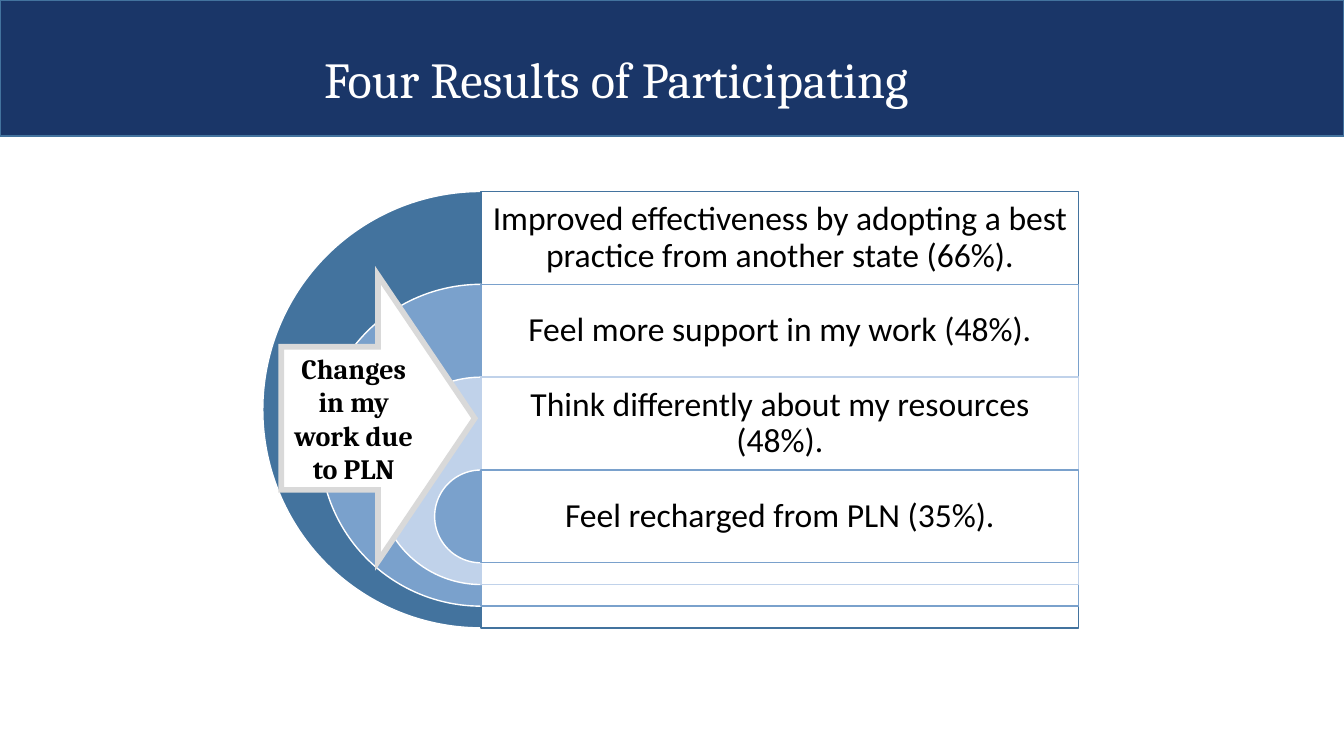
import dataclasses

import lxml.etree
import pptx
import pptx.dml.color
import pptx.enum.shapes
import pptx.enum.text
import pptx.oxml.ns
import pptx.shapes.autoshape
import pptx.slide
import pptx.util

Pt = pptx.util.Pt
Color = pptx.dml.color.RGBColor
Preset = pptx.enum.shapes.MSO_SHAPE


@dataclasses.dataclass(frozen=True)
class Theme:
    navy: str = "1A3668"
    steel: str = "43739E"
    sky: str = "7AA1CC"
    pale: str = "C0D2EA"
    grey: str = "D9D9D9"
    white: str = "FFFFFF"
    black: str = "000000"
    serif: str = "Cambria"
    sans: str = "Calibri"
    title_size: int = 36
    result_size: int = 24
    arrow_size: int = 20


THEME = Theme()


@dataclasses.dataclass(frozen=True)
class Frame:
    left: float
    top: float
    width: float
    height: float

    def lengths(self) -> list[pptx.util.Length]:
        return [Pt(value) for value in dataclasses.astuple(self)]


@dataclasses.dataclass(frozen=True)
class Result:
    text: str
    color: str


RESULTS = [
    Result("Improved effectiveness by adopting a best practice from another state (66%).", THEME.steel),
    Result("Feel more support in my work (48%).", THEME.sky),
    Result("Think differently about my resources (48%).", THEME.pale),
    Result("Feel recharged from PLN (35%).", THEME.sky),
]

AXIS_LEFT = 343.6
RESULTS_TOP = 136.8
RESULTS_WIDTH = 427
ROW_HEIGHT = 66.3
RING_GROWTH = 81.8
TITLE_FORMAT = {"name": THEME.serif, "size": Pt(THEME.title_size)}
RESULT_FORMAT = {"name": THEME.sans, "size": Pt(THEME.result_size)}
ARROW_FORMAT = {"name": THEME.serif, "size": Pt(THEME.arrow_size), "bold": True}


def add_preset(page: pptx.slide.Slide, preset: Preset, frame: Frame, fill: str,
               line: str, line_width: float = 1) -> pptx.shapes.autoshape.Shape:
    shape = page.shapes.add_shape(preset, *frame.lengths())
    shape.shadow.inherit = False
    shape.fill.solid()
    shape.fill.fore_color.rgb = Color.from_string(fill)
    shape.line.color.rgb = Color.from_string(line)
    shape.line.width = Pt(line_width)
    return shape


def write_text(shape: pptx.shapes.autoshape.Shape, text: str, color: str,
               font_format: dict, line_spacing: float = 1) -> None:
    box = shape.text_frame
    box.word_wrap = True
    box.vertical_anchor = pptx.enum.text.MSO_ANCHOR.MIDDLE
    para = box.paragraphs[0]
    para.alignment = pptx.enum.text.PP_ALIGN.CENTER
    para.line_spacing = line_spacing
    span = para.add_run()
    span.text = text
    span.font.color.rgb = Color.from_string(color)
    for name, value in font_format.items():
        setattr(span.font, name, value)


def set_fill_opacity(shape: pptx.shapes.autoshape.Shape, percent: int) -> None:
    color = shape.fill._xPr.find(".//" + pptx.oxml.ns.qn("a:srgbClr"))
    lxml.etree.SubElement(color, pptx.oxml.ns.qn("a:alpha"), val=str(percent * 1000))


def sharpen_corners(shape: pptx.shapes.autoshape.Shape) -> None:
    line = shape.line._get_or_add_ln()
    lxml.etree.SubElement(line, pptx.oxml.ns.qn("a:miter"), lim="800000")


def add_title(page: pptx.slide.Slide) -> None:
    add_preset(page, Preset.RECTANGLE, Frame(0, 0, 960, 97.2), THEME.navy, THEME.steel)
    title = page.shapes.add_textbox(*Frame(30.2, 6.5, 828, 104.4).lengths())
    write_text(title, "Four Results of Participating ", THEME.white, TITLE_FORMAT, 0.9)


def add_result(page: pptx.slide.Slide, index: int, result: Result) -> None:
    """Draw a half disc, its panel and its text; each later result is nested in the one before."""
    top = RESULTS_TOP + index * ROW_HEIGHT
    size = ROW_HEIGHT + (len(RESULTS) - 1 - index) * RING_GROWTH

    half_disc = add_preset(page, Preset.PIE, Frame(AXIS_LEFT - size / 2, top, size, size),
                           result.color, THEME.white)
    half_disc.adjustments[0] = 54
    half_disc.adjustments[1] = 162

    panel = add_preset(page, Preset.RECTANGLE, Frame(AXIS_LEFT, top, RESULTS_WIDTH, size),
                       THEME.white, result.color)
    set_fill_opacity(panel, 90)

    label = page.shapes.add_textbox(*Frame(AXIS_LEFT, top, RESULTS_WIDTH, ROW_HEIGHT).lengths())
    for side in ("left", "top", "right", "bottom"):
        setattr(label.text_frame, f"margin_{side}", Pt(7.2))
    write_text(label, result.text, THEME.black, RESULT_FORMAT, 0.9)


def add_arrow(page: pptx.slide.Slide) -> None:
    arrow = add_preset(page, Preset.RIGHT_ARROW, Frame(200.9, 196.6, 138.2, 204.5),
                       THEME.white, THEME.grey, 4)
    sharpen_corners(arrow)
    write_text(arrow, "Changes in my work due to PLN", THEME.black, ARROW_FORMAT)


def main() -> None:
    deck = pptx.Presentation()
    deck.slide_width, deck.slide_height = Pt(960), Pt(540)
    page = deck.slides.add_slide(deck.slide_layouts[6])
    add_title(page)
    for index, result in enumerate(RESULTS):
        add_result(page, index, result)
    add_arrow(page)
    deck.save("out.pptx")


if __name__ == "__main__":
    main()
